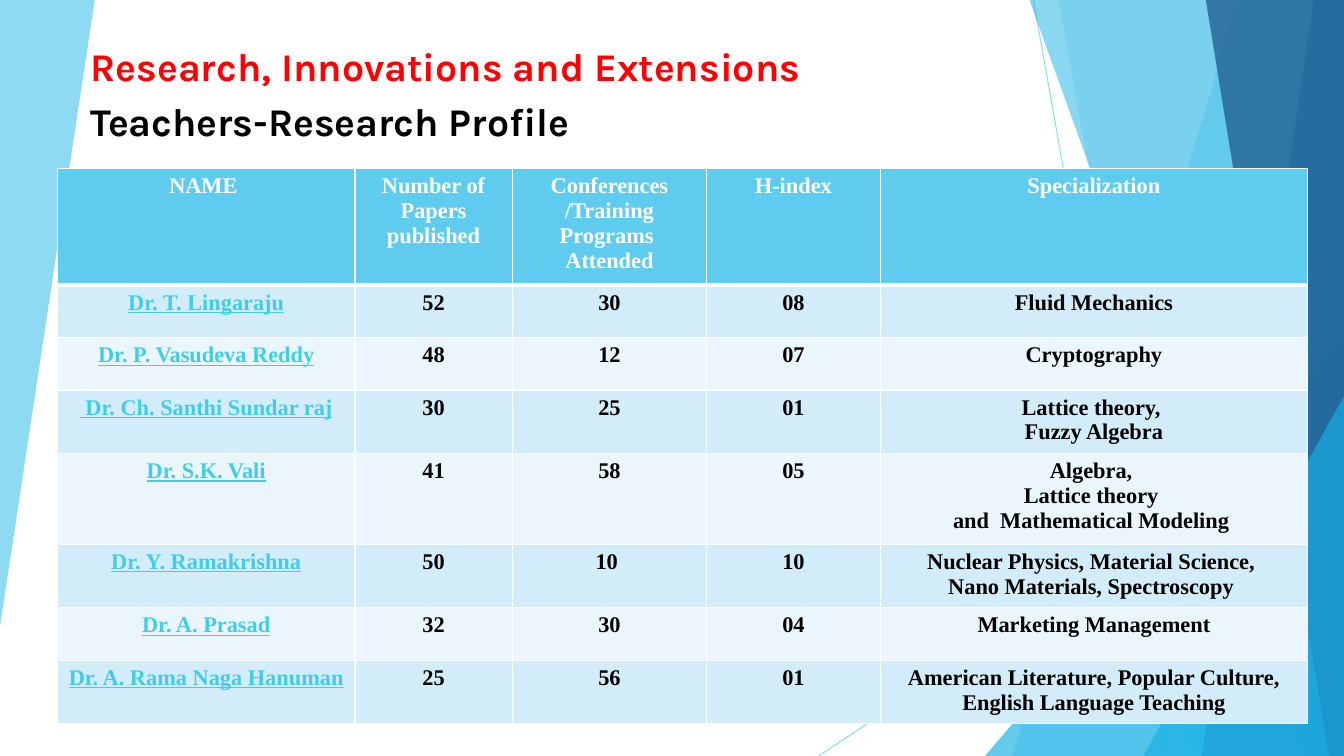
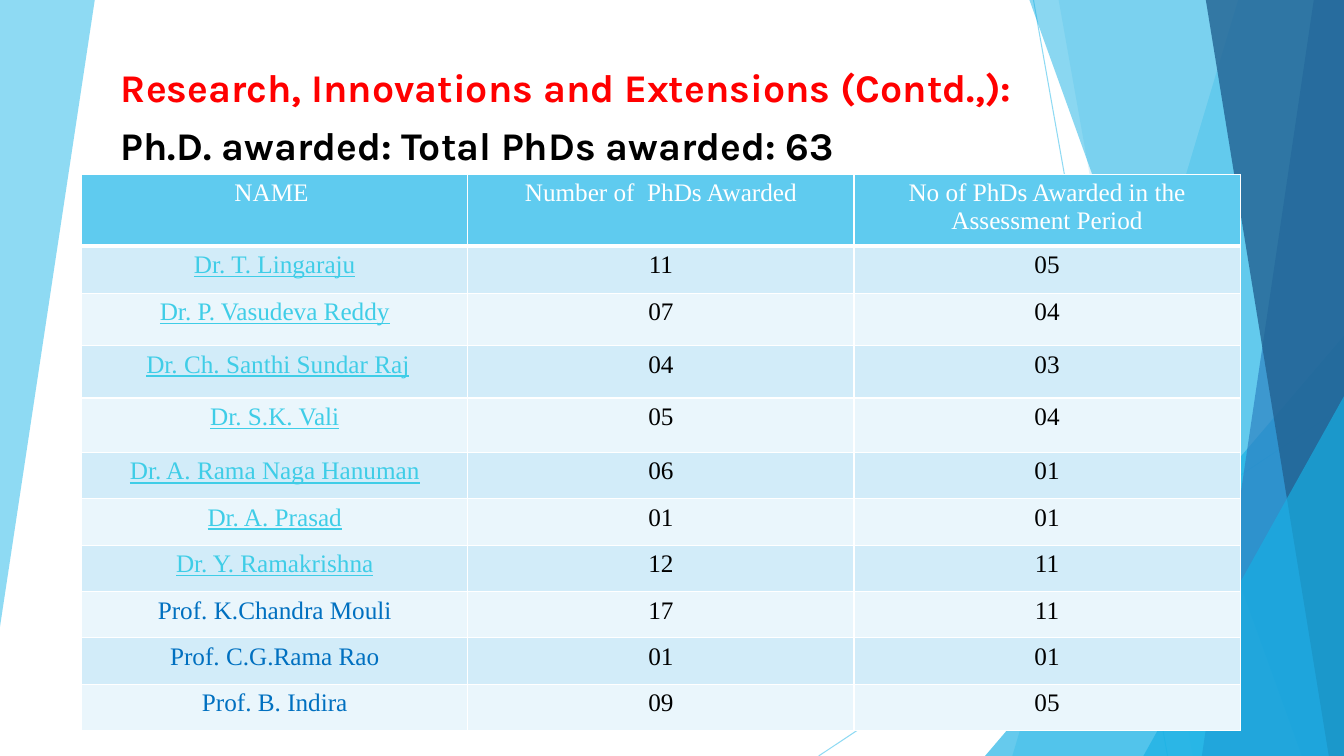
from lxml import etree
from pptx import Presentation
from pptx import util as u
from pptx.dml.color import RGBColor
from pptx.enum import shapes, text
from pptx.oxml.ns import qn

Inches, Pt = u.Inches, u.Pt
WIDTH, HEIGHT = 13.33, 7.5

SKY, BLUE = "5FCBEF", "17B0E4"
WHITE, BLACK, RED = "FFFFFF", "000000", "FF0000"
LINK, NAVY = "3FCDE7", "0070C0"
BANDS = ("D2ECF9", "EAF6FC")
HEADING_FONT, TABLE_FONT = "Karla", "Times New Roman"


def color(value):
    return RGBColor.from_string(value)


def set_opacity(fill_parent, percent):
    """Make the solid fill under an element partly transparent."""
    srgb = next(fill_parent.iter(qn("a:srgbClr")))
    etree.SubElement(srgb, qn("a:alpha"), val=str(percent * 1000))


def set_border(cell, side, points):
    line = etree.SubElement(cell._tc.get_or_add_tcPr(), qn(f"a:ln{side}"), w=str(Pt(points)))
    fill = etree.SubElement(line, qn("a:solidFill"))
    etree.SubElement(fill, qn("a:srgbClr"), val=WHITE)


def set_font(paragraph, name, size, value, bold=False, underline=False):
    font = paragraph.font
    font.name, font.size, font.bold = name, Pt(size), bold
    font.underline = underline
    font.color.rgb = color(value)


class Deck:
    """Holds the presentation, its shared style and the current slide."""

    def __init__(self):
        self.presentation = Presentation()
        self.presentation.slide_width = Inches(WIDTH)
        self.presentation.slide_height = Inches(HEIGHT)
        self.layout = self.presentation.slide_layouts[5]
        for placeholder in list(self.layout.placeholders)[1:]:
            self.layout.shapes.element.remove(placeholder.element)
        self.slide = None

    def add_slide(self):
        first = self.slide is None
        self.slide = self.presentation.slides.add_slide(self.layout)
        if first:
            self.build_backdrop()

    def build_backdrop(self):
        """Draw the facets once and move them to the layout all slides use."""
        facets = [
            self.polygon([(0, 0), (0.94, 0), (0, 6.22)], SKY, 70),
            self.line((10.25, 0), (11.58, HEIGHT)),
            self.line((WIDTH, 4.03), (8.12, HEIGHT)),
            self.right_facet(12.28, 10.04, SKY, 36),
            self.right_facet(10.5, 11.83, SKY, 20),
            self.triangle(9.77, 3.33),
            self.right_facet(10.21, 12.91, BLUE, 50),
            self.right_facet(13.03, 11.92, "2E83C3", 70),
            self.right_facet(11.96, 13.18, "226292", 80),
            self.triangle(11.34, 3.93),
        ]
        for facet in facets:
            self.layout.shapes.element.append(facet.element)

    def paint(self, shape, value, opacity):
        shape.shadow.inherit = False
        shape.fill.solid()
        shape.fill.fore_color.rgb = color(value)
        set_opacity(shape.element.spPr, opacity)
        shape.line.fill.background()
        return shape

    def polygon(self, points, value, opacity):
        start, *others = [(Inches(x), Inches(y)) for x, y in points]
        builder = self.slide.shapes.build_freeform(*start)
        builder.add_line_segments(others, close=True)
        return self.paint(builder.convert_to_shape(), value, opacity)

    def right_facet(self, top, bottom, value, opacity):
        """Fill from a slanted edge to the right side of the slide."""
        points = [(top, 0), (WIDTH, 0), (WIDTH, HEIGHT), (bottom, HEIGHT)]
        return self.polygon(points, value, opacity)

    def triangle(self, left, top):
        shape = self.slide.shapes.add_shape(
            shapes.MSO_SHAPE.ISOSCELES_TRIANGLE, Inches(left), Inches(top),
            Inches(WIDTH - left), Inches(HEIGHT - top))
        shape.adjustments[0] = 1
        return self.paint(shape, BLUE, 66)

    def line(self, start, end):
        connector = self.slide.shapes.add_connector(
            shapes.MSO_CONNECTOR.STRAIGHT, *map(Inches, start + end))
        connector.line.width = Pt(0.75)
        connector.line.color.rgb = color(SKY)
        properties = connector.element.spPr
        set_opacity(properties, 70)
        etree.SubElement(properties, qn("a:effectLst"))
        return connector

    def heading(self, shape, words, left, top, width, value):
        shape.left, shape.top = Inches(left), Inches(top)
        shape.width, shape.height = Inches(width), Inches(0.57)
        frame = shape.text_frame
        frame.word_wrap = True
        frame.auto_size = text.MSO_AUTO_SIZE.NONE
        frame.vertical_anchor = text.MSO_ANCHOR.TOP
        frame.text = words
        paragraph = frame.paragraphs[0]
        paragraph.alignment = text.PP_ALIGN.LEFT
        set_font(paragraph, HEADING_FONT, 28, value, bold=True)

    def title(self, words, left, top, width):
        self.heading(self.slide.shapes.title, words, left, top, width, RED)

    def subtitle(self, words, left, top, width):
        box = self.slide.shapes.add_textbox(0, 0, 0, 0)
        self.heading(box, words, left, top, width, BLACK)

    def table(self, rows, left, top, widths, heights, size, bold):
        table = self.slide.shapes.add_table(
            len(rows), len(widths), Inches(left), Inches(top),
            Inches(sum(widths)), Inches(sum(heights))).table
        for column, width in zip(table.columns, widths):
            column.width = Inches(width)
        for row, height in zip(table.rows, heights):
            row.height = Inches(height)
        for i, row in enumerate(rows):
            for j, words in enumerate(row):
                self.fill_cell(table.cell(i, j), words, i, j, size, bold)
        return table

    def fill_cell(self, cell, words, i, j, size, bold):
        for side in "LRTB":
            under_header = (i, side) in ((0, "B"), (1, "T"))
            set_border(cell, side, 3 if under_header else 1)
        cell.fill.solid()
        cell.fill.fore_color.rgb = color(SKY if i == 0 else BANDS[(i - 1) % 2])
        linked = i > 0 and j == 0 and not words.startswith("Prof.")
        if i == 0:
            value = WHITE
        elif j == 0:
            value = LINK if linked else NAVY
        else:
            value = BLACK
        cell.text = words
        for paragraph in cell.text_frame.paragraphs:
            paragraph.alignment = text.PP_ALIGN.CENTER
            set_font(paragraph, TABLE_FONT, size, value, bold, linked)


PROFILES = [
    ("NAME ", "Number of Papers published",
     "Conferences /Training Programs \nAttended", "H-index", "Specialization"),
    ("Dr. T. Lingaraju", "52", "30", "08", "Fluid Mechanics"),
    ("Dr. P. Vasudeva Reddy", "48", "12", "07", "Cryptography"),
    (" Dr. Ch. Santhi Sundar raj", "30", "25", "01", "Lattice theory, \nFuzzy Algebra"),
    ("Dr. S.K. Vali", "41", "58", "05",
     "Algebra, \nLattice theory \nand  Mathematical Modeling "),
    ("Dr. Y. Ramakrishna", "50", "10 ", "10",
     "Nuclear Physics, Material Science, \nNano Materials, Spectroscopy "),
    ("Dr. A. Prasad", "32", "30", "04", "Marketing Management"),
    ("Dr. A. Rama Naga Hanuman", "25", "56", "01",
     "American Literature, Popular Culture, English Language Teaching"),
]

AWARDS = [
    ("NAME ", "Number of  PhDs Awarded", "No of PhDs Awarded in the Assessment Period"),
    ("Dr. T. Lingaraju", "11", "05"),
    ("Dr. P. Vasudeva Reddy", "07", "04"),
    (" Dr. Ch. Santhi Sundar Raj", "04", "03"),
    ("Dr. S.K. Vali", "05", "04"),
    ("Dr. A. Rama Naga Hanuman", "06", "01"),
    ("Dr. A. Prasad", "01", "01"),
    ("Dr. Y. Ramakrishna", "12", "11"),
    ("Prof. K.Chandra Mouli", "17", "11"),
    ("Prof. C.G.Rama Rao", "01", "01"),
    ("Prof. B. Indira", "09", "05"),
]


def main():
    deck = Deck()

    deck.add_slide()
    deck.title("Research, Innovations and Extensions", 0.8, 0.37, 9.17)
    deck.subtitle("Teachers-Research Profile", 0.8, 0.92, 11.05)
    deck.table(PROFILES, 0.57, 1.67, [2.95, 1.56, 1.93, 1.72, 4.24],
               [1.16, 0.52, 0.52, 0.63, 0.9, 0.63, 0.52, 0.63], size=16, bold=True)

    deck.add_slide()
    deck.title("Research, Innovations and Extensions (Contd.,):", 1.1, 0.58, 9.44)
    deck.subtitle("Ph.D. awarded: Total PhDs awarded: 63", 1.1, 1.15, 9.95)
    awards = deck.table(AWARDS, 0.81, 1.73, [3.83] * 3,
                        [0.71, 0.47, 0.52, 0.52, 0.54] + [0.46] * 6, size=18, bold=False)
    # The space ahead of this name is not underlined
    paragraph = awards.cell(3, 0).text_frame.paragraphs[0]
    space = paragraph.runs[0]
    space.text, name = space.text[0], space.text[1:]
    space.font.underline = False
    paragraph.add_run().text = name

    deck.presentation.save("out.pptx")


if __name__ == "__main__":
    main()
